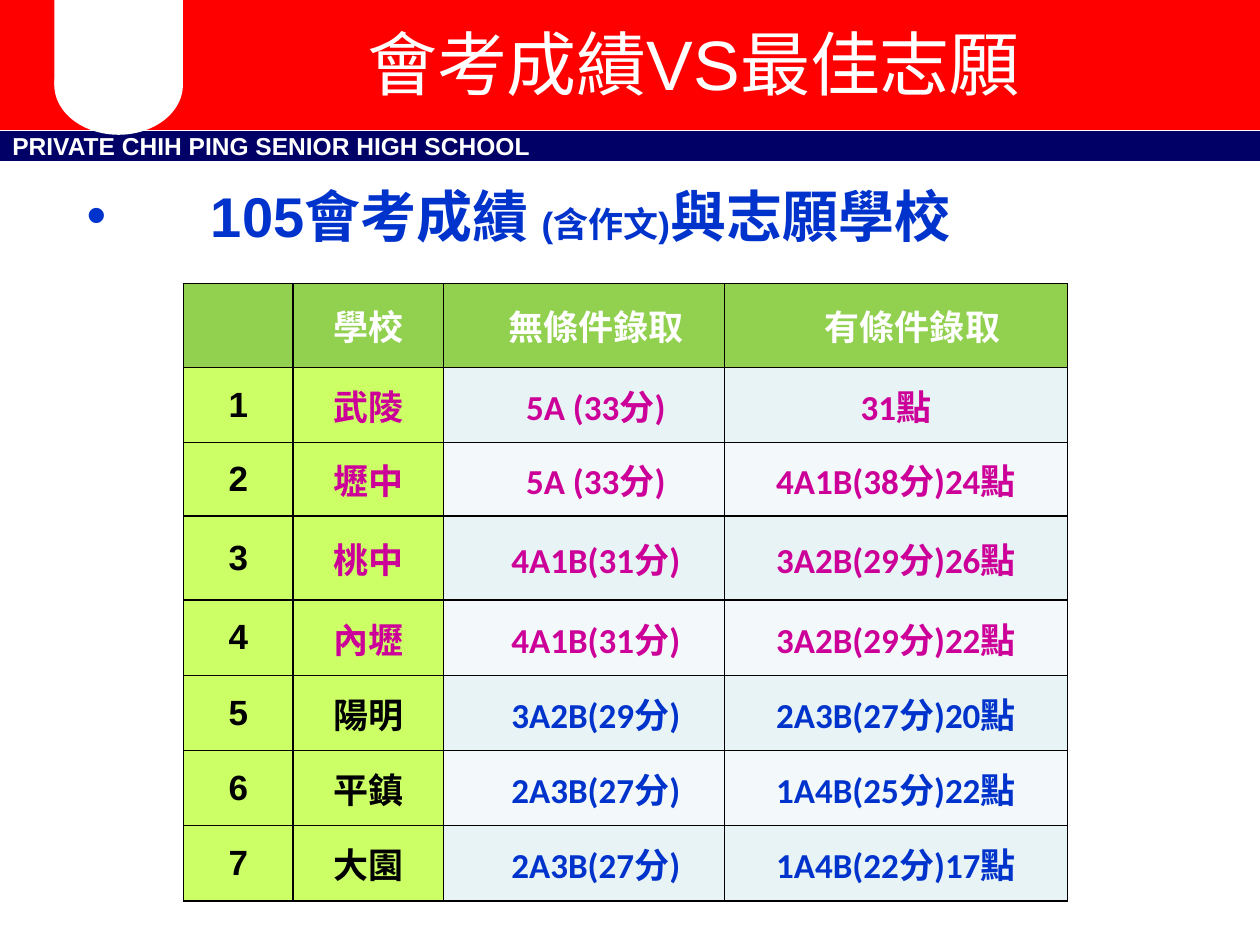
from lxml import etree
from pptx import Presentation
from pptx.dml.color import RGBColor
from pptx.enum.shapes import MSO_SHAPE
from pptx.enum.text import MSO_ANCHOR, PP_ALIGN
from pptx.oxml import parse_xml
from pptx.oxml.ns import nsdecls, qn
from pptx.util import Pt

RECTANGLE, OVAL = MSO_SHAPE.RECTANGLE, MSO_SHAPE.OVAL
MIDDLE, TOP = MSO_ANCHOR.MIDDLE, MSO_ANCHOR.TOP
CENTER, LEFT = PP_ALIGN.CENTER, PP_ALIGN.LEFT

WHITE = RGBColor(0xFF, 0xFF, 0xFF)
BLACK = RGBColor(0, 0, 0)
RED = RGBColor(0xFF, 0, 0)
NAVY = RGBColor(0, 0, 0x66)
BLUE = RGBColor(0, 0x33, 0xCC)
MAGENTA = RGBColor(0xCC, 0, 0x99)
GREEN = RGBColor(0x92, 0xD0, 0x50)
LIME = RGBColor(0xCC, 0xFF, 0x66)
BANDS = [RGBColor(0xE7, 0xF3, 0xF4), RGBColor(0xF3, 0xF9, 0xFA)]


def add_run(paragraph, text, **font_format):
    run = paragraph.add_run()
    run.text = text
    color = font_format.pop("color")
    for name, value in font_format.items():
        setattr(run.font, name, value)
    run.font.color.rgb = color


def add_borders(cell):
    properties = cell._tc.get_or_add_tcPr()
    for side in ("lnL", "lnR", "lnT", "lnB"):
        properties.append(parse_xml(
            f'<a:{side} {nsdecls("a")} w="12700"><a:solidFill>'
            f'<a:srgbClr val="{BLACK}"/></a:solidFill></a:{side}>'))


presentation = Presentation()
presentation.slide_width, presentation.slide_height = Pt(720), Pt(540)
slide = presentation.slides.add_slide(presentation.slide_layouts[5])

# Header bands and the white tab
header_parts = [
    (RECTANGLE, 0, 75, 720, 17, NAVY),
    (RECTANGLE, 0, 0, 720, 71.5, RED),
    (RECTANGLE, 31, -2, 73.5, 51, WHITE),
    (OVAL, 31, 20, 73.5, 57, WHITE),
]
header_shapes = []
for kind, left, top, width, height, color in header_parts:
    shape = slide.shapes.add_shape(kind, Pt(left), Pt(top), Pt(width), Pt(height))
    shape.shadow.inherit = False
    shape.fill.solid()
    shape.fill.fore_color.rgb = color
    shape.line.fill.background()
    header_shapes.append(shape)
school_band, title_band = header_shapes[:2]
title_band.line.color.rgb = RED
title_band.line.width = Pt(6)

school_band.text_frame.vertical_anchor = MIDDLE
paragraph = school_band.text_frame.paragraphs[0]
paragraph.alignment = LEFT
add_run(paragraph, "PRIVATE CHIH PING SENIOR HIGH SCHOOL",
        size=Pt(14), name="Arial", bold=True, color=WHITE)

# Title, brought in front of the red band
title = slide.shapes.title
title.left, title.top, title.width, title.height = Pt(110), Pt(0), Pt(572.5), Pt(71.5)
title.element.getparent().append(title.element)
title.text_frame.vertical_anchor = MIDDLE
paragraph = title.text_frame.paragraphs[0]
paragraph.alignment = CENTER
add_run(paragraph, "會考成績VS最佳志願", size=Pt(40), name="Arial", color=WHITE)

# Subtitle with a bullet
subtitle = slide.shapes.add_textbox(Pt(42.5), Pt(100), Pt(648), Pt(50))
subtitle.text_frame.word_wrap = True
subtitle.text_frame.vertical_anchor = TOP
paragraph = subtitle.text_frame.paragraphs[0]
properties = paragraph._p.get_or_add_pPr()
properties.set("marL", str(Pt(71)))
properties.set("indent", str(-Pt(71)))
etree.SubElement(properties, qn("a:buFont")).set("typeface", "Arial")
etree.SubElement(properties, qn("a:buChar")).set("char", "•")
for text, size in [("105會考成績 ", 32), ("(含作文)", 20), ("與志願學校", 32)]:
    add_run(paragraph, text, size=Pt(size), name="Arial", bold=True, color=BLUE)

# Admission table
header = ["", "學校", "無條件錄取", "有條件錄取"]
schools = [
    ("武陵", "5A (33分)", "31點"),
    ("壢中", "5A (33分)", "4A1B(38分)24點"),
    ("桃中", "4A1B(31分)", "3A2B(29分)26點"),
    ("內壢", "4A1B(31分)", "3A2B(29分)22點"),
    ("陽明", "3A2B(29分)", "2A3B(27分)20點"),
    ("平鎮", "2A3B(27分)", "1A4B(25分)22點"),
    ("大園", "2A3B(27分)", "1A4B(22分)17點"),
]
TOP_SCHOOLS = 4
rows = [header] + [(str(number), *school) for number, school in enumerate(schools, 1)]
column_widths = [62.5, 86, 160.5, 196]
row_heights = [48, 43, 42, 48, 43, 43, 43, 43]

table = slide.shapes.add_table(
    len(rows), len(header), Pt(105), Pt(162),
    Pt(sum(column_widths)), Pt(sum(row_heights))).table
table.first_row = table.horz_banding = False
for column, width in zip(table.columns, column_widths):
    column.width = Pt(width)
for row, height in zip(table.rows, row_heights):
    row.height = Pt(height)

for row_index, texts in enumerate(rows):
    is_top = row_index <= TOP_SCHOOLS
    for column_index, text in enumerate(texts):
        is_score = column_index >= 2
        font_name = "Arial"
        if row_index == 0:
            fill, color = GREEN, WHITE
        elif is_score:
            fill, color = BANDS[(row_index - 1) % 2], MAGENTA if is_top else BLUE
            font_name = "Calibri"
        else:
            fill, color = LIME, MAGENTA if is_top and column_index == 1 else BLACK

        cell = table.cell(row_index, column_index)
        add_borders(cell)
        cell.fill.solid()
        cell.fill.fore_color.rgb = fill
        cell.vertical_anchor = MIDDLE
        cell.margin_left = cell.margin_right = Pt(5)
        cell.margin_top = cell.margin_bottom = Pt(0)
        paragraph = cell.text_frame.paragraphs[0]
        paragraph.alignment = CENTER
        if column_index == 2 or (row_index == 0 and is_score):
            indent = Pt(13.5) if column_index == 2 else Pt(19)
            paragraph._p.get_or_add_pPr().set("indent", str(indent))
        if text:
            add_run(paragraph, text, size=Pt(20), name=font_name, bold=True, color=color)

presentation.save("out.pptx")
